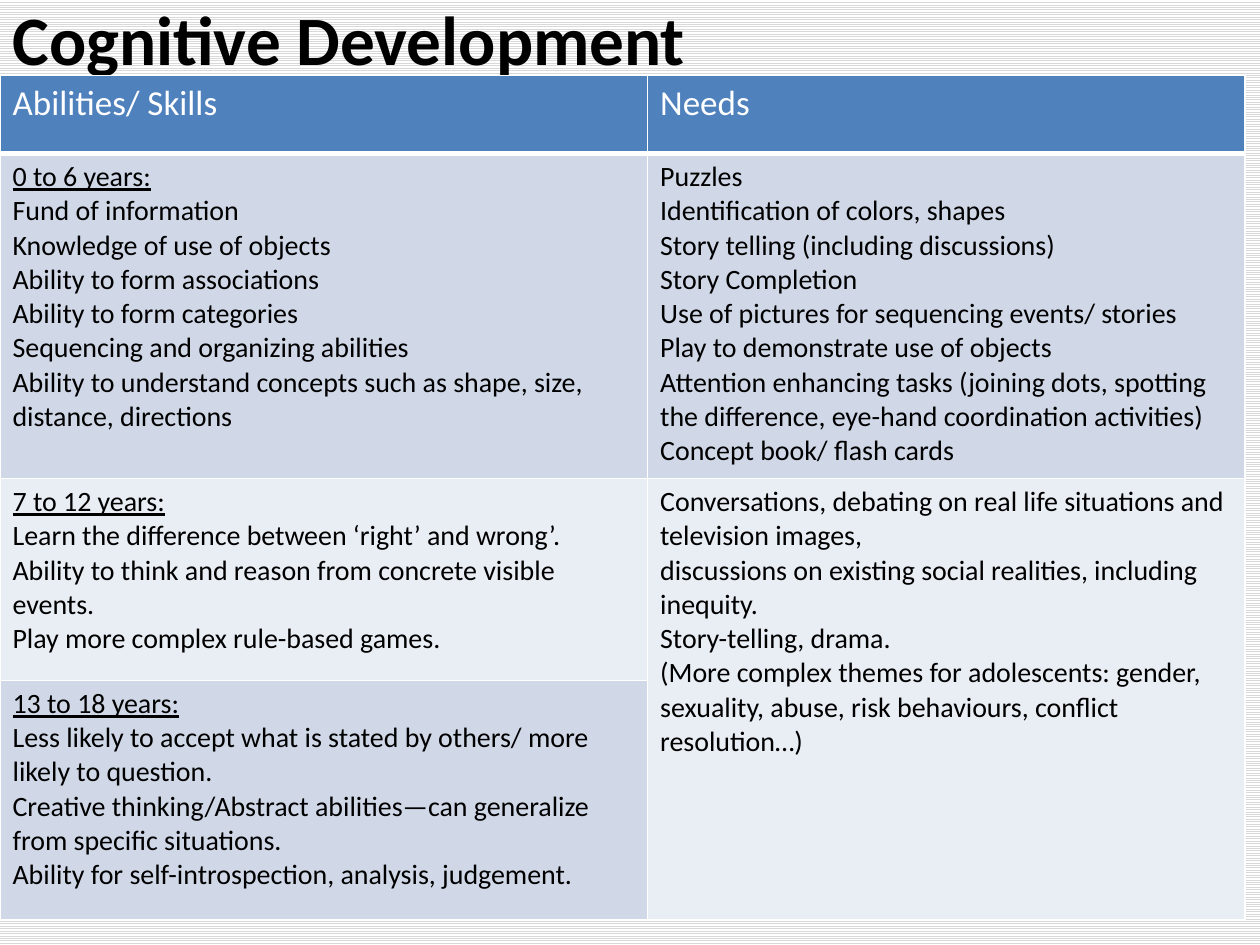
"""Build the Cognitive Development slide with its table of abilities and needs."""
from lxml.etree import SubElement
from pptx import Presentation
from pptx.dml.color import RGBColor
from pptx.enum.dml import MSO_PATTERN
from pptx.enum.text import MSO_ANCHOR, PP_ALIGN
from pptx.oxml.ns import qn
from pptx.util import Inches, Pt

COLORS = {
    "white": "FFFFFF",
    "black": "000000",
    "stripe": "D9D9D9",
    "head": "4F81BD",
    "dark": "D0D8E8",
    "light": "E9EDF4",
}
FONT = "Calibri"
WIDTHS = [5.14, 4.74]
HEIGHTS = [0.62, 2.58, 1.6, 1.9]
FILLS = ["head", "dark", "light", "dark"]
ROWS = [
    [["Abilities/ Skills"], ["Needs"]],
    [
        [
            "0 to 6 years:",
            "Fund of information",
            "Knowledge of use of objects",
            "Ability to form associations",
            "Ability to form categories",
            "Sequencing and organizing abilities",
            "Ability to understand concepts such as shape, size, distance, directions",
        ],
        [
            "Puzzles",
            "Identification of colors, shapes",
            "Story telling (including discussions)",
            "Story Completion",
            "Use of pictures for sequencing events/ stories",
            "Play to demonstrate use of objects",
            "Attention enhancing tasks (joining dots, spotting the difference, "
            "eye-hand coordination activities)",
            "Concept book/ flash cards",
        ],
    ],
    [
        [
            "7 to 12 years:",
            "Learn the difference between ‘right’ and wrong’.",
            "Ability to think and reason from concrete visible events.",
            "Play more complex rule-based games.",
        ],
        [
            "Conversations, debating on real life situations and television images,",
            "discussions on existing social realities, including inequity.",
            "Story-telling, drama.",
            "(More complex themes for adolescents: gender, sexuality, abuse, "
            "risk behaviours, conflict resolution…)",
        ],
    ],
    [
        [
            "13 to 18 years:",
            "Less likely to accept what is stated by others/ more likely to question.",
            "Creative thinking/Abstract abilities—can generalize from specific situations.",
            "Ability for self-introspection, analysis, judgement.",
        ],
        [],
    ],
]


def color(name):
    return RGBColor.from_string(COLORS[name])


def border(cell, side, width):
    line = SubElement(cell._tc.get_or_add_tcPr(), qn(f"a:ln{side}"), w=str(Pt(width)))
    fill = SubElement(line, qn("a:solidFill"))
    SubElement(fill, qn("a:srgbClr"), val=COLORS["white"])


deck = Presentation()
deck.slide_width, deck.slide_height = Inches(10), Inches(7.5)
slide = deck.slides.add_slide(deck.slide_layouts[5])

back = slide.background.fill
back.patterned()
back.pattern = MSO_PATTERN.LIGHT_HORIZONTAL
back.fore_color.rgb = color("stripe")
back.back_color.rgb = color("white")

title = slide.shapes.title
title.left, title.top = Inches(0), Inches(0)
title.width, title.height = Inches(9), Inches(0.6)
title.text_frame.text = "Cognitive Development"
title.text_frame.vertical_anchor = MSO_ANCHOR.MIDDLE
para = title.text_frame.paragraphs[0]
para.alignment = PP_ALIGN.LEFT
para.font.name, para.font.size, para.font.bold = FONT, Pt(39.6), True
para.font.color.rgb = color("black")

table = slide.shapes.add_table(
    len(HEIGHTS), len(WIDTHS), Inches(0), Inches(0.6),
    Inches(sum(WIDTHS)), Inches(sum(HEIGHTS)),
).table
for col, width in zip(table.columns, WIDTHS):
    col.width = Inches(width)
for row, height in zip(table.rows, HEIGHTS):
    row.height = Inches(height)
table.cell(2, 1).merge(table.cell(3, 1))

for r, row in enumerate(ROWS):
    head = r == 0
    for c, lines in enumerate(row):
        cell = table.cell(r, c)
        for side in "LRTB":
            border(cell, side, 3 if head and side == "B" else 1)
        cell.fill.solid()
        cell.fill.fore_color.rgb = color(FILLS[r])
        if not lines:
            continue
        cell.text_frame.text = "\n".join(lines)
        for i, para in enumerate(cell.text_frame.paragraphs):
            font = para.font
            font.name, font.size, font.bold = FONT, Pt(20 if head else 16), False
            font.color.rgb = color("white" if head else "black")
            font.underline = not head and c == 0 and i == 0

deck.save("out.pptx")
